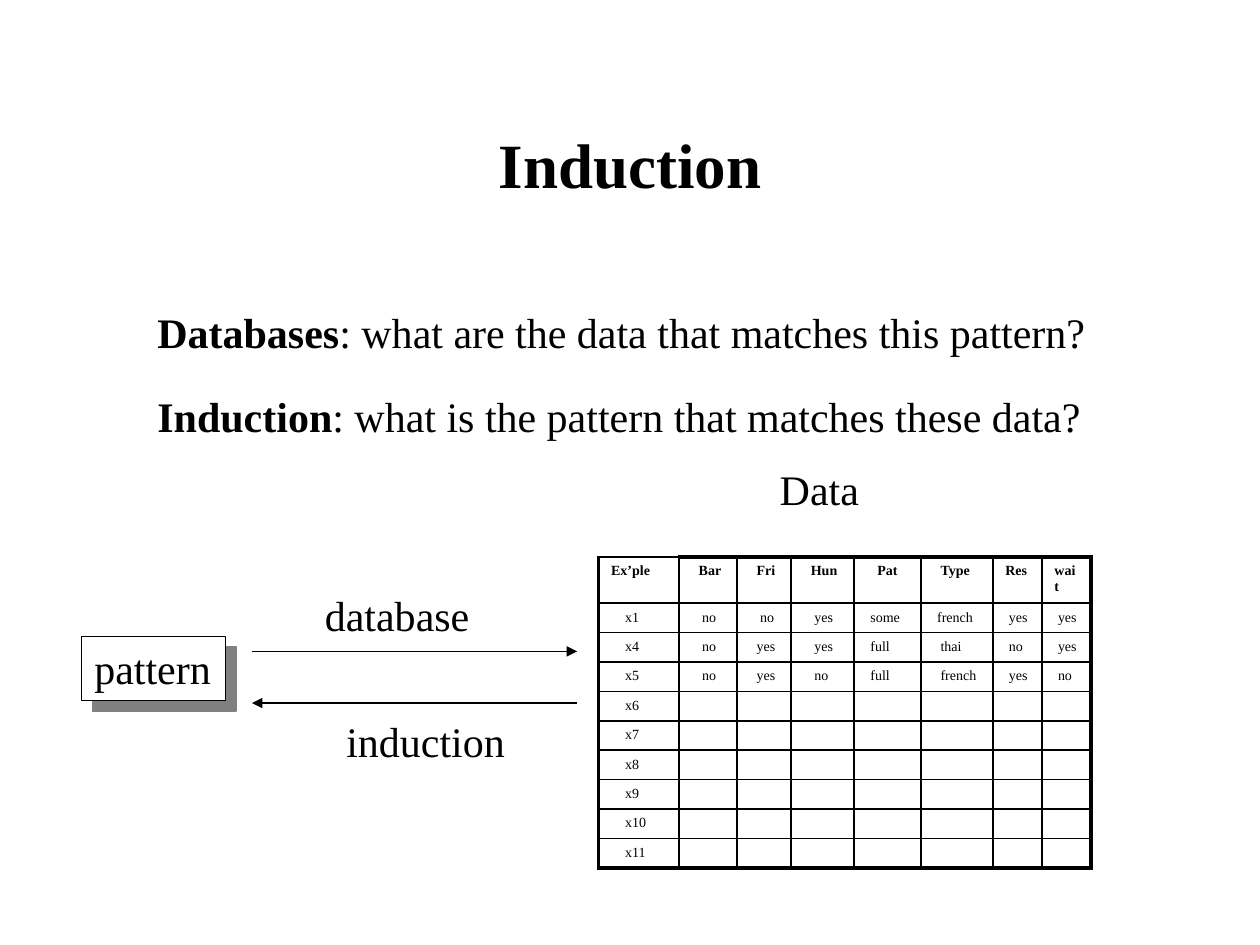
import pptx
import pptx.util
import pptx.dml.color
import pptx.enum.shapes
import pptx.enum.text
import pptx.oxml
import pptx.oxml.ns
from dataclasses import dataclass
from lxml import etree

Inches, Pt = pptx.util.Inches, pptx.util.Pt
qn = pptx.oxml.ns.qn
ALIGN, ANCHOR = pptx.enum.text.PP_ALIGN, pptx.enum.text.MSO_ANCHOR


@dataclass(frozen=True)
class Theme:
    font: str = "Times New Roman"
    ink: str = "000000"
    paper: str = "FFFFFF"
    shade: str = "808080"
    title: float = 36
    body: float = 24
    cell: float = 8
    thin: float = 0.75
    grid: float = 1
    frame: float = 2.25


T = Theme()

# Each entry is a text and its indent in spaces.
HEADER = [("Ex’ple", 0), ("Bar", 2), ("Fri", 2), ("Hun", 2),
          ("Pat", 3), ("Type", 2), ("Res", 0), ("wait", 0)]
EXAMPLES = [
    [("x1", 4), ("no", 3), ("no", 3), ("yes", 3), ("some", 1), ("french", 1), ("yes", 1), ("yes", 1)],
    [("x4", 4), ("no", 3), ("yes", 2), ("yes", 3), ("full", 1), ("thai", 2), ("no", 1), ("yes", 1)],
    [("x5", 4), ("no", 3), ("yes", 2), ("no", 3), ("full", 1), ("french", 2), ("yes", 1), ("no", 1)],
]
UNFILLED = [[(f"x{n}", 4)] + [("", 0)] * 7 for n in range(6, 12)]
COLUMNS = [0.64, 0.46, 0.43, 0.5, 0.53, 0.57, 0.39, 0.39]
HEADER_HEIGHT, ROW_HEIGHT = 0.35, 0.22


def rgb(value):
    return pptx.dml.color.RGBColor.from_string(value)


def write(tf, text, size=T.body, bold=False, lead="", align=ALIGN.LEFT):
    """Write one paragraph, with an optional bold lead before the text."""
    p = tf.paragraphs[0]
    p.alignment = align
    for part, heavy in ((lead, True), (text, bold)):
        if part:
            r = p.add_run()
            r.text = part
            r.font.name, r.font.size, r.font.bold = T.font, Pt(size), heavy
            r.font.color.rgb = rgb(T.ink)
    return p


def label(s, box, text, wrap=False, anchor=ANCHOR.TOP, **style):
    sp = s.shapes.add_textbox(*map(Inches, box))
    sp.text_frame.word_wrap = wrap
    sp.text_frame.vertical_anchor = anchor
    write(sp.text_frame, text, **style)


def arrow(s, start, end):
    line = s.shapes.add_connector(pptx.enum.shapes.MSO_CONNECTOR.STRAIGHT,
                                  *map(Inches, start + end))
    line.line.color.rgb = rgb(T.ink)
    line.line.width = Pt(T.thin)
    etree.SubElement(line.line._get_or_add_ln(), qn("a:tailEnd"), type="triangle")
    etree.SubElement(line._element.spPr, qn("a:effectLst"))


def pattern_box(s, box):
    sp = s.shapes.add_shape(pptx.enum.shapes.MSO_SHAPE.RECTANGLE, *map(Inches, box))
    sp.shadow.inherit = False
    sp.fill.solid()
    sp.fill.fore_color.rgb = rgb(T.paper)
    sp.line.color.rgb = rgb(T.ink)
    sp.line.width = Pt(T.thin)
    effects = sp._element.spPr.find(qn("a:effectLst"))
    shadow = etree.SubElement(effects, qn("a:outerShdw"), dist=str(Pt(8.5)),
                              dir=str(45 * 60000), algn="ctr", rotWithShape="0")
    etree.SubElement(shadow, qn("a:srgbClr"), val=T.shade)
    sp.text_frame.word_wrap = False
    sp.text_frame.vertical_anchor = ANCHOR.TOP
    write(sp.text_frame, "pattern")


def set_borders(cell, widths):
    tcPr = cell._tc.get_or_add_tcPr()
    for side, width in zip("LRTB", widths):
        ln = etree.SubElement(tcPr, qn(f"a:ln{side}"), w=str(Pt(width)))
        fill = etree.SubElement(ln, qn("a:solidFill"))
        etree.SubElement(fill, qn("a:srgbClr"), val=T.ink)


def data_table(s, left, top):
    rows = [HEADER] + EXAMPLES + UNFILLED
    last_row, last_col = len(rows) - 1, len(COLUMNS) - 1
    height = HEADER_HEIGHT + last_row * ROW_HEIGHT
    table = s.shapes.add_table(len(rows), len(COLUMNS), Inches(left), Inches(top),
                               Inches(sum(COLUMNS)), Inches(height)).table
    table.first_row = table.horz_banding = False
    for column, width in zip(table.columns, COLUMNS):
        column.width = Inches(width)
    for i, row in enumerate(rows):
        table.rows[i].height = Inches(ROW_HEIGHT if i else HEADER_HEIGHT)
        for j, (text, indent) in enumerate(row):
            cell = table.cell(i, j)
            outer = (j == 0, j == last_col, i == 0 and j > 0, i == last_row)
            set_borders(cell, [T.frame if edge else T.grid for edge in outer])
            cell.fill.background()
            p = write(cell.text_frame, text, size=T.cell, bold=i == 0)
            if indent:
                p._p.get_or_add_pPr().set("marL", str(Pt(indent * T.cell / 4)))
            if not text:
                etree.SubElement(p._p, qn("a:endParaRPr"), sz=str(int(T.cell * 100)))


def questions(s, left, top):
    pitch = 0.67
    for i, (lead, text) in enumerate([
            ("Databases", ": what are the data that matches this pattern?"),
            ("Induction", ": what is the pattern that matches these data?")]):
        label(s, (left, top + i * pitch, 7.62, 0.51), text, lead=lead)


def exchange(s, left, right, top):
    """Draw the two opposite arrows, with their labels outside them."""
    lower = top + 0.41
    arrow(s, (left, top), (right, top))
    label(s, (left + 0.48, top - 0.54, 1.35, 0.5), "database")
    arrow(s, (right, lower), (left, lower))
    label(s, (left + 0.65, lower + 0.05, 1.46, 0.5), "induction")


def main():
    prs = pptx.Presentation()
    prs.slide_width, prs.slide_height = Inches(10), Inches(7.5)
    s = prs.slides.add_slide(prs.slide_layouts[6])
    label(s, (0.75, 0.67, 8.5, 1.25), "Induction", wrap=True, anchor=ANCHOR.MIDDLE,
          size=T.title, bold=True, align=ALIGN.CENTER)
    data_table(s, 4.75, 4.42)
    label(s, (6.09, 3.63, 0.83, 0.5), "Data")
    pattern_box(s, (0.65, 5.05, 1.14, 0.51))
    questions(s, 1.15, 2.38)
    exchange(s, 2, 4.58, 5.17)
    prs.save("out.pptx")


if __name__ == "__main__":
    main()
